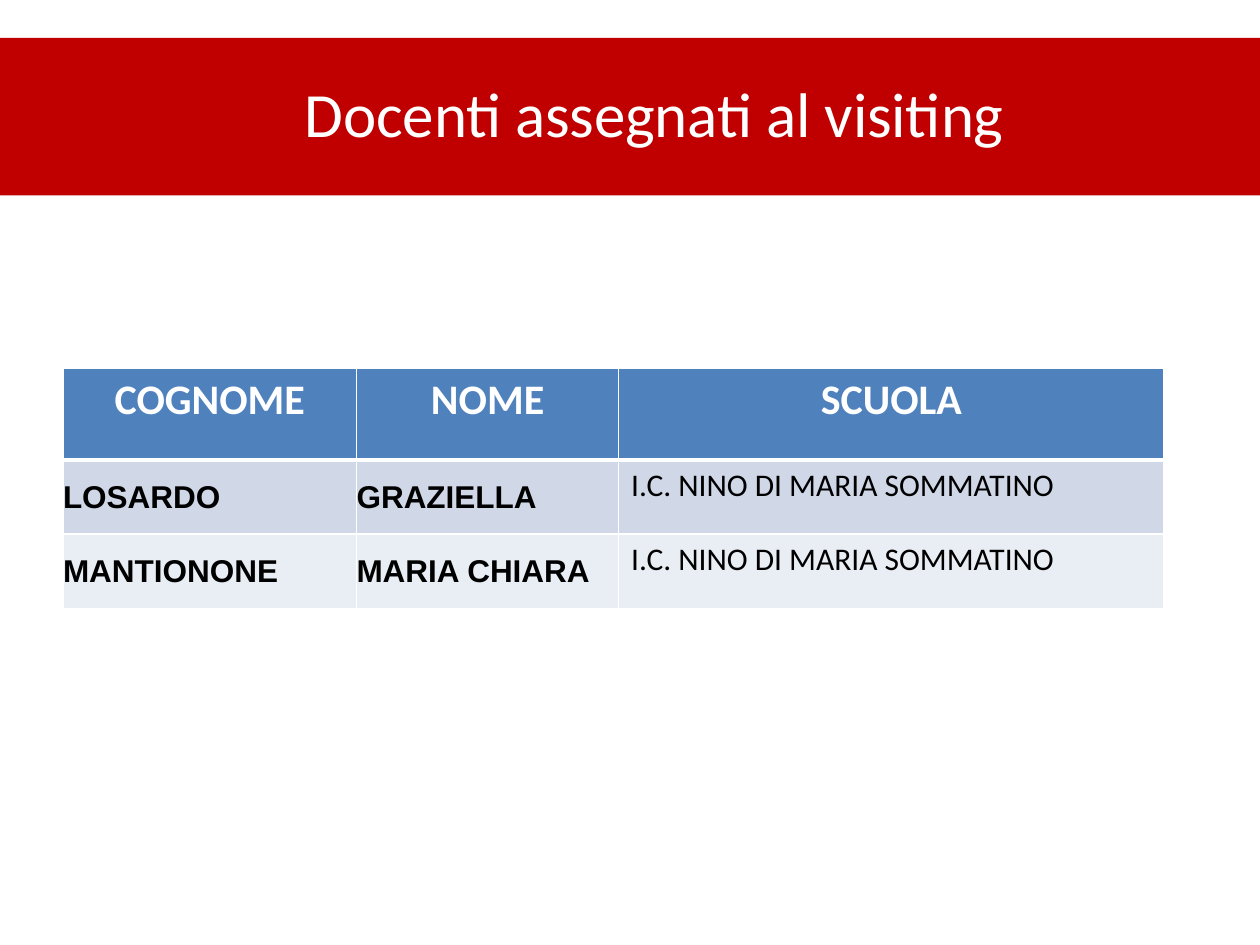
"""Build the slide that lists the teachers assigned to the visiting."""
from dataclasses import dataclass

import pptx
import pptx.dml.color
import pptx.enum.shapes
import pptx.enum.text
import pptx.oxml
import pptx.oxml.ns
import pptx.util

Inches = pptx.util.Inches
Align = pptx.enum.text.PP_ALIGN
Anchor = pptx.enum.text.MSO_ANCHOR


@dataclass(frozen=True)
class Theme:
    band: str = "C00000"
    header: str = "4F81BD"
    rows: tuple[str, str] = ("D0D8E8", "E9EDF4")
    white: str = "FFFFFF"
    black: str = "000000"
    heading_font: str = "Calibri"
    name_font: str = "Arial"
    title_size: int = 36
    header_size: int = 24
    body_size: int = 18


@dataclass(frozen=True)
class Teacher:
    surname: str
    name: str
    school: str


THEME = Theme()
TITLE = "Docenti assegnati al visiting"
HEADERS = ("COGNOME", "NOME", "SCUOLA")
TEACHERS = (
    Teacher("LOSARDO", "GRAZIELLA", "I.C. NINO DI MARIA SOMMATINO"),
    Teacher("MANTIONONE", "MARIA CHIARA", "I.C. NINO DI MARIA SOMMATINO"),
)
COLUMN_WIDTHS = (2.33, 2.08, 4.33)
HEADER_HEIGHT, ROW_HEIGHT = 0.73, 0.59


def rgb(color: str):
    return pptx.dml.color.RGBColor.from_string(color)


def write_text(frame, text: str, *, size: int, font: str = THEME.heading_font,
               color: str = THEME.black, bold: bool = False, align=Align.LEFT):
    paragraph = frame.paragraphs[0]
    paragraph.alignment = align
    run = paragraph.add_run()
    run.text = text
    run.font.size = pptx.util.Pt(size)
    run.font.name = font
    run.font.bold = bold
    run.font.color.rgb = rgb(color)
    return paragraph


def draw_title(slide) -> None:
    title = slide.shapes.title
    title.left, title.top = Inches(2.42), Inches(0.58)
    title.width, title.height = Inches(5.76), Inches(0.62)
    frame = title.text_frame
    frame.margin_left = frame.margin_right = frame.margin_bottom = 0
    frame.margin_top = Inches(0.01)
    frame.vertical_anchor = Anchor.TOP
    frame.auto_size = pptx.enum.text.MSO_AUTO_SIZE.SHAPE_TO_FIT_TEXT
    paragraph = write_text(frame, TITLE, size=THEME.title_size, color=THEME.white)
    paragraph.space_before = pptx.util.Pt(1)
    paragraph.runs[0].font._element.set("spc", "-10")


def draw_band(slide) -> None:
    band = slide.shapes.add_shape(
        pptx.enum.shapes.MSO_SHAPE.RECTANGLE, 0, Inches(0.3), Inches(10), Inches(1.25))
    band.shadow.inherit = False
    band.fill.solid()
    band.fill.fore_color.rgb = rgb(THEME.band)
    band.line.fill.background()
    slide.shapes.title.element.addprevious(band.element)


def style_cell(cell, fill: str, bottom: int = 1, top: int = 1) -> None:
    properties = cell._tc.get_or_add_tcPr()
    for side, width in (("L", 1), ("R", 1), ("T", top), ("B", bottom)):
        properties.append(pptx.oxml.parse_xml(
            f'<a:ln{side} {pptx.oxml.ns.nsdecls("a")} w="{pptx.util.Pt(width)}">'
            f'<a:solidFill><a:srgbClr val="{THEME.white}"/></a:solidFill></a:ln{side}>'))
    cell.fill.solid()
    cell.fill.fore_color.rgb = rgb(fill)


def draw_name(cell, text: str) -> None:
    cell.margin_left = cell.margin_right = cell.margin_top = cell.margin_bottom = 0
    cell.vertical_anchor = Anchor.MIDDLE
    write_text(cell.text_frame, text, size=THEME.body_size, font=THEME.name_font, bold=True)


def draw_table(slide, teachers: tuple[Teacher, ...]) -> None:
    heights = (HEADER_HEIGHT,) + (ROW_HEIGHT,) * len(teachers)
    table = slide.shapes.add_table(
        len(heights), len(HEADERS), Inches(0.5), Inches(2.92),
        Inches(sum(COLUMN_WIDTHS)), Inches(sum(heights))).table
    for column, width in zip(table.columns, COLUMN_WIDTHS):
        column.width = Inches(width)
    for row, height in zip(table.rows, heights):
        row.height = Inches(height)
    for cell, header in zip(table.rows[0].cells, HEADERS):
        style_cell(cell, THEME.header, bottom=3)
        write_text(cell.text_frame, header, size=THEME.header_size,
                   color=THEME.white, bold=True, align=Align.CENTER)
    for index, teacher in enumerate(teachers):
        cells = list(table.rows[index + 1].cells)
        for cell in cells:
            style_cell(cell, THEME.rows[index % 2], top=1 if index else 3)
        draw_name(cells[0], teacher.surname)
        draw_name(cells[1], teacher.name)
        write_text(cells[2].text_frame, teacher.school, size=THEME.body_size)


def main() -> None:
    presentation = pptx.Presentation()
    presentation.slide_width, presentation.slide_height = Inches(10), Inches(7.5)
    slide = presentation.slides.add_slide(presentation.slide_layouts.get_by_name("Title Only"))
    draw_title(slide)
    draw_band(slide)
    draw_table(slide, TEACHERS)
    presentation.save("out.pptx")


if __name__ == "__main__":
    main()
